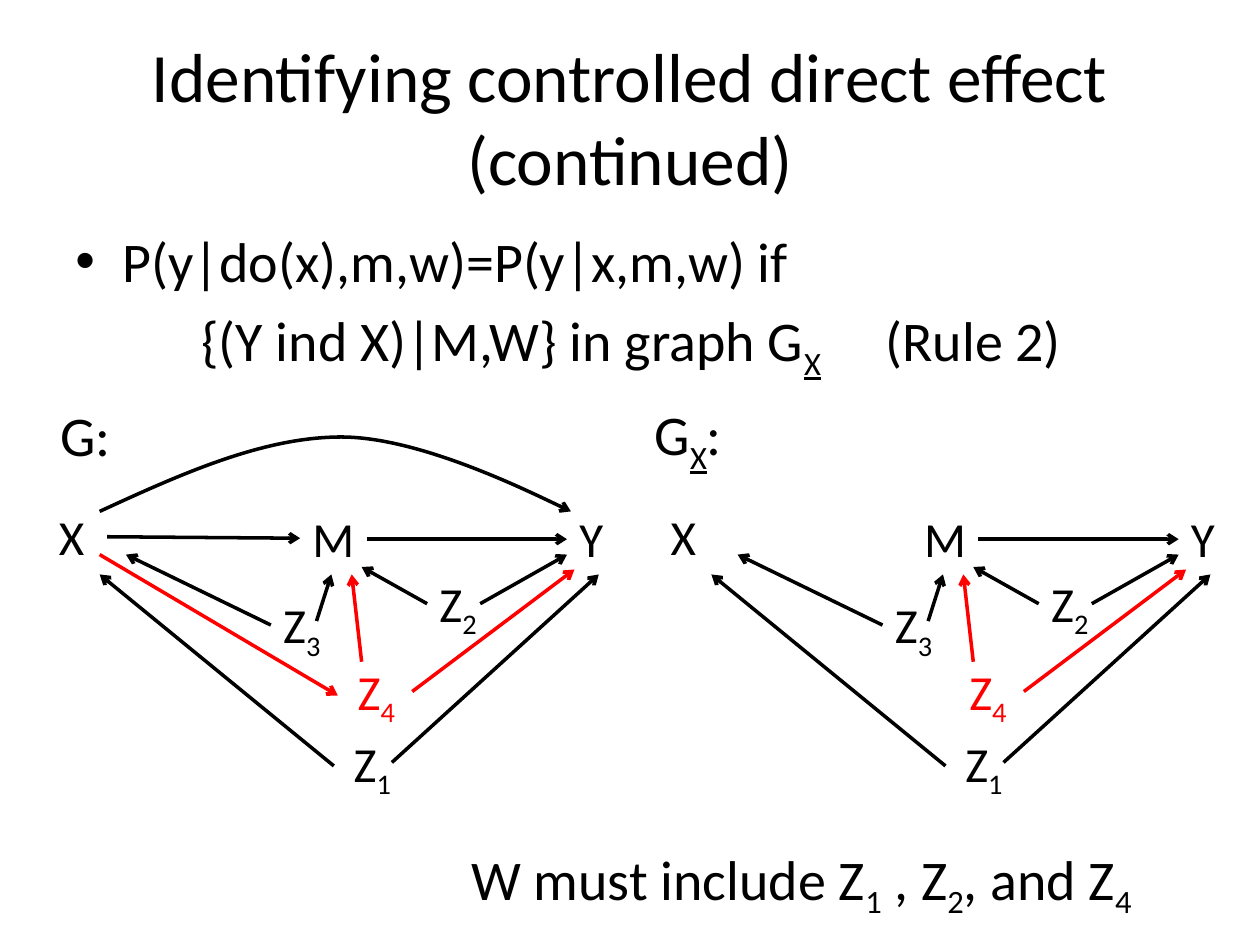
from lxml.etree import SubElement
from pptx import Presentation
from pptx.dml.color import RGBColor
from pptx.enum.shapes import MSO_CONNECTOR as Connector
from pptx.enum.text import MSO_ANCHOR as Anchor, MSO_AUTO_SIZE as AutoSize, PP_ALIGN as Align
from pptx.oxml.ns import qn
from pptx.util import Cm, Pt

BLACK, RED = "000000", "FF0000"
GRAPH_SHIFT = 12.33
LABEL_HEIGHT = 1.45
NODES = [
    ("X", 0.94, 10.08, 1.24, BLACK),
    ("M", 6.05, 10.13, 1.24, BLACK),
    ("Y", 11.43, 10.13, 1.24, BLACK),
    ("Z_4", 6.96, 13.21, 1.35, RED),
    ("Z_2", 8.61, 11.43, 1.35, BLACK),
    ("Z_3", 5.46, 11.87, 1.35, BLACK),
    ("Z_1", 6.88, 14.66, 1.35, BLACK),
]
SHARED_ARROWS = [
    ((7.39, 10.87), (11.43, 10.87), BLACK),
    ((9.68, 12.17), (11.43, 11.18), BLACK),
    ((8.31, 13.94), (11.58, 11.48), RED),
    ((8.61, 12.17), (7.29, 11.43), BLACK),
    ((5.46, 12.6), (2.54, 11.18), BLACK),
    ((6.38, 12.52), (6.68, 11.58), BLACK),
    ((7.29, 13.34), (7.09, 11.58), RED),
    ((7.9, 15.37), (12.07, 11.58), BLACK),
    ((6.73, 15.44), (2.01, 11.58), BLACK),
]
ARROWS_FROM_X = [
    ((2.16, 10.82), (6.05, 10.85), BLACK),
    ((2.01, 11.18), (6.81, 14.02), RED),
]
CURVE_X_TO_Y = [
    (2.01, 10.31), (3.66, 9.55), (5.31, 8.81), (6.88, 8.81),
    (8.46, 8.81), (11.51, 10.31), (11.51, 10.31),
]


def color(value):
    return RGBColor.from_string(value)


def apply_format(target, values):
    for name, value in values.items():
        setattr(target, name, value)


class SlideBuilder:
    font_name = "Calibri"
    line_width = Pt(2)

    def __init__(self, slide):
        self.slide = slide

    def add_runs(self, paragraph, text, size, ink=BLACK):
        first, *others = text.split("_")
        pieces = [(first, False)]
        for part in others:
            pieces += [(part[0], True), (part[1:], False)]
        for piece, subscript in pieces:
            if not piece:
                continue
            run = paragraph.add_run()
            run.text = piece
            apply_format(run.font, {"name": self.font_name, "size": Pt(size)})
            run.font.color.rgb = color(ink)
            if subscript:
                run.font.underline = piece == "X"
                run._r.get_or_add_rPr().set("baseline", "-25000")

    def title(self, text, left, top, width, height):
        shape = self.slide.shapes.title
        apply_format(shape, {"left": Cm(left), "top": Cm(top),
                             "width": Cm(width), "height": Cm(height)})
        frame = shape.text_frame
        apply_format(frame, {"vertical_anchor": Anchor.MIDDLE, "word_wrap": True,
                             "auto_size": AutoSize.NONE})
        paragraph = frame.paragraphs[0]
        paragraph.alignment = Align.CENTER
        self.add_runs(paragraph, text, 39.6)

    def text(self, text, left, top, width, height, size=32, ink=BLACK, parent=None, wrap=True):
        shapes = (parent or self.slide).shapes
        shape = shapes.add_textbox(Cm(left), Cm(top), Cm(width), Cm(height))
        shape.text_frame.word_wrap = wrap
        self.add_runs(shape.text_frame.paragraphs[0], text, size, ink)
        return shape

    def statement(self, first, second, tab_stops, left, top, width, height):
        frame = self.text(first, left, top, width, height).text_frame
        bulleted = frame.paragraphs[0]
        condition = frame.add_paragraph()
        self.add_runs(condition, second, 32)
        for paragraph in (bulleted, condition):
            paragraph.space_before = Pt(6.4)
        properties = bulleted._p.get_or_add_pPr()
        properties.set("marL", str(Cm(0.95)))
        properties.set("indent", str(Cm(-0.95)))
        SubElement(properties, qn("a:buFont"), typeface="Arial")
        SubElement(properties, qn("a:buChar"), char="•")
        tabs = SubElement(condition._p.get_or_add_pPr(), qn("a:tabLst"))
        for stop in tab_stops:
            SubElement(tabs, qn("a:tab"), pos=str(Cm(stop)), algn="l")

    def style_arrow(self, shape, ink):
        shape.line.color.rgb = color(ink)
        shape.line.width = self.line_width
        SubElement(shape._element.spPr.get_or_add_ln(), qn("a:tailEnd"), type="arrow")

    def arrow(self, start, end, ink, parent, shift):
        connector = parent.shapes.add_connector(
            Connector.STRAIGHT, Cm(start[0] + shift), Cm(start[1]),
            Cm(end[0] + shift), Cm(end[1]))
        self.style_arrow(connector, ink)
        SubElement(connector._element.spPr, qn("a:effectLst"))

    def curved_arrow(self, points, ink, parent):
        start, *others = [(Cm(x), Cm(y)) for x, y in points]
        builder = parent.shapes.build_freeform(*start)
        builder.add_line_segments(others, close=False)
        shape = builder.convert_to_shape()
        shape.shadow.inherit = False
        shape.fill.background()
        self.style_arrow(shape, ink)
        segments = shape._element.xpath(".//a:lnTo")
        outline = segments[0].getparent()
        for index in range(0, len(segments), 3):
            cubic = SubElement(outline, qn("a:cubicBezTo"))
            for segment in segments[index:index + 3]:
                cubic.append(segment[0])
                outline.remove(segment)

    def graph(self, arrows, shift=0):
        group = self.slide.shapes.add_group_shape()
        for label, left, top, width, ink in NODES:
            self.text(label, left + shift, top, width, LABEL_HEIGHT, 28, ink, group)
        for start, end, ink in arrows:
            self.arrow(start, end, ink, group, shift)
        return group


def main():
    presentation = Presentation()
    apply_format(presentation, {"slide_width": Cm(25.4), "slide_height": Cm(19.05)})
    slide = presentation.slides.add_slide(presentation.slide_layouts[5])
    builder = SlideBuilder(slide)
    builder.title("Identifying controlled direct effect (continued)", 1.27, 0.76, 22.86, 3.18)
    builder.statement("P(y|do(x),m,w)=P(y|x,m,w) if",
                      "\t{(Y ind X)|M,W} in graph G_X\t(Rule 2)",
                      (2.54, 16.33), 1.27, 4.45, 22.86, 12.57)
    builder.text("G:", 0.97, 7.95, 1.55, 1.63, wrap=False)
    builder.text("G_X:", 12.95, 7.92, 1.93, 1.63, wrap=False)
    full_graph = builder.graph(SHARED_ARROWS + ARROWS_FROM_X)
    builder.curved_arrow(CURVE_X_TO_Y, BLACK, full_graph)
    builder.graph(SHARED_ARROWS, GRAPH_SHIFT)
    builder.text("W must include Z_1 , Z_2, and Z_4", 9.25, 16.89, 16.15, 1.63)
    presentation.save("out.pptx")


if __name__ == "__main__":
    main()
